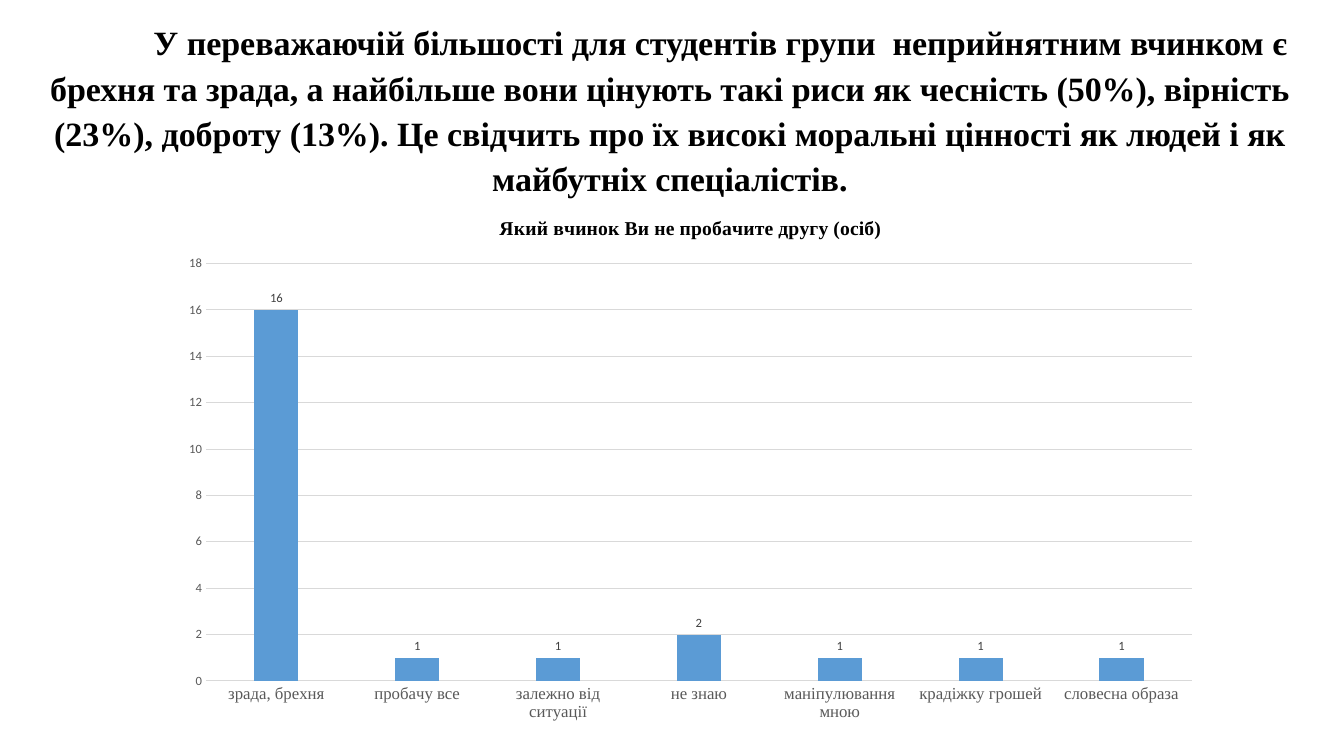
from lxml.etree import SubElement
from pptx import Presentation
from pptx.chart.data import CategoryChartData
from pptx.dml.color import RGBColor
from pptx.enum.chart import XL_CHART_TYPE, XL_LABEL_POSITION, XL_TICK_MARK
from pptx.enum.text import MSO_ANCHOR, PP_ALIGN
from pptx.oxml.ns import qn
from pptx.util import Inches, Pt

COLORS = {
    "text": "000000",
    "axis": "595959",
    "grid": "D9D9D9",
    "bar": "5B9BD5",
    "label": "404040",
}
SERIF, SANS = "Times New Roman", "Calibri"


def style_font(font, name, size, color, bold=False):
    font.name = name
    font.size = Pt(size)
    font.bold = bold
    font.color.rgb = RGBColor.from_string(COLORS[color])


def style_line(line, color):
    line.color.rgb = RGBColor.from_string(COLORS[color])
    line.width = Pt(0.75)


deck = Presentation()
deck.slide_width = Inches(13.33)
deck.slide_height = Inches(7.5)
page = deck.slides.add_slide(deck.slide_layouts[6])

# Heading
box = page.shapes.add_textbox(Inches(0.1), Inches(0.19), Inches(13.09), Inches(1.76))
frame = box.text_frame
frame.word_wrap = True
frame.vertical_anchor = MSO_ANCHOR.MIDDLE
para = frame.paragraphs[0]
para.text = (
    "У переважаючій більшості для студентів групи  неприйнятним вчинком є "
    "брехня та зрада, а найбільше вони цінують такі риси як чесність (50%), "
    "вірність (23%), доброту (13%). Це свідчить про їх високі моральні цінності "
    "як людей і як майбутніх спеціалістів."
)
para.alignment = PP_ALIGN.CENTER
para.line_spacing = 1.11
para.space_after = Pt(8)
para._p.get_or_add_pPr().set("indent", str(Inches(1)))
style_font(para.runs[0].font, SERIF, 24.3, "text", bold=True)

# Column chart
answers = {
    "зрада, брехня": 16,
    "пробачу все": 1,
    "залежно від ситуації": 1,
    "не знаю": 2,
    "маніпулювання мною": 1,
    "крадіжку грошей": 1,
    "словесна образа": 1,
}
data = CategoryChartData()
data.categories = list(answers)
data.add_series("Series 1", list(answers.values()))
chart = page.shapes.add_chart(
    XL_CHART_TYPE.COLUMN_CLUSTERED,
    Inches(1.67), Inches(1.94), Inches(10.36), Inches(5.31), data,
).chart
style_font(chart.font, SANS, 10, "text")
chart.has_legend = False
chart.has_title = True
title = chart.chart_title.text_frame.paragraphs[0]
title.text = "Який вчинок Ви не пробачите другу (осіб)"
style_font(title.runs[0].font, SERIF, 14, "text", bold=True)
chart.chart_title.include_in_layout = False

plot = chart.plots[0]
plot.gap_width = 219
plot.overlap = -27
plot.vary_by_categories = False
fill = plot.series[0].format.fill
fill.solid()
fill.fore_color.rgb = RGBColor.from_string(COLORS["bar"])
labels = plot.series[0].data_labels
labels.show_value = True
labels.position = XL_LABEL_POSITION.OUTSIDE_END
style_font(labels.font, SANS, 9, "label")

for axis, name, size in ((chart.category_axis, SERIF, 12), (chart.value_axis, SANS, 9)):
    axis.major_tick_mark = XL_TICK_MARK.NONE
    axis.minor_tick_mark = XL_TICK_MARK.NONE
    style_font(axis.tick_labels.font, name, size, "axis")
style_line(chart.category_axis.format.line, "grid")
values = chart.value_axis
values.minimum_scale, values.maximum_scale, values.major_unit = 0, 18, 2
values.format.line.fill.background()
values.has_major_gridlines = True
style_line(values.major_gridlines.format.line, "grid")

# Inner plot area, as fractions of the chart
plot_area = chart._chartSpace.chart.plotArea
for old_layout in plot_area.findall(qn("c:layout")):
    plot_area.remove(old_layout)
layout = SubElement(plot_area, qn("c:layout"))
plot_area.insert(0, layout)
manual = SubElement(layout, qn("c:manualLayout"))
for tag, value in (
    ("layoutTarget", "inner"), ("xMode", "edge"), ("yMode", "edge"),
    ("x", "0.036"), ("y", "0.127"), ("w", "0.944"), ("h", "0.78"),
):
    SubElement(manual, qn(f"c:{tag}")).set("val", value)

deck.save("out.pptx")
